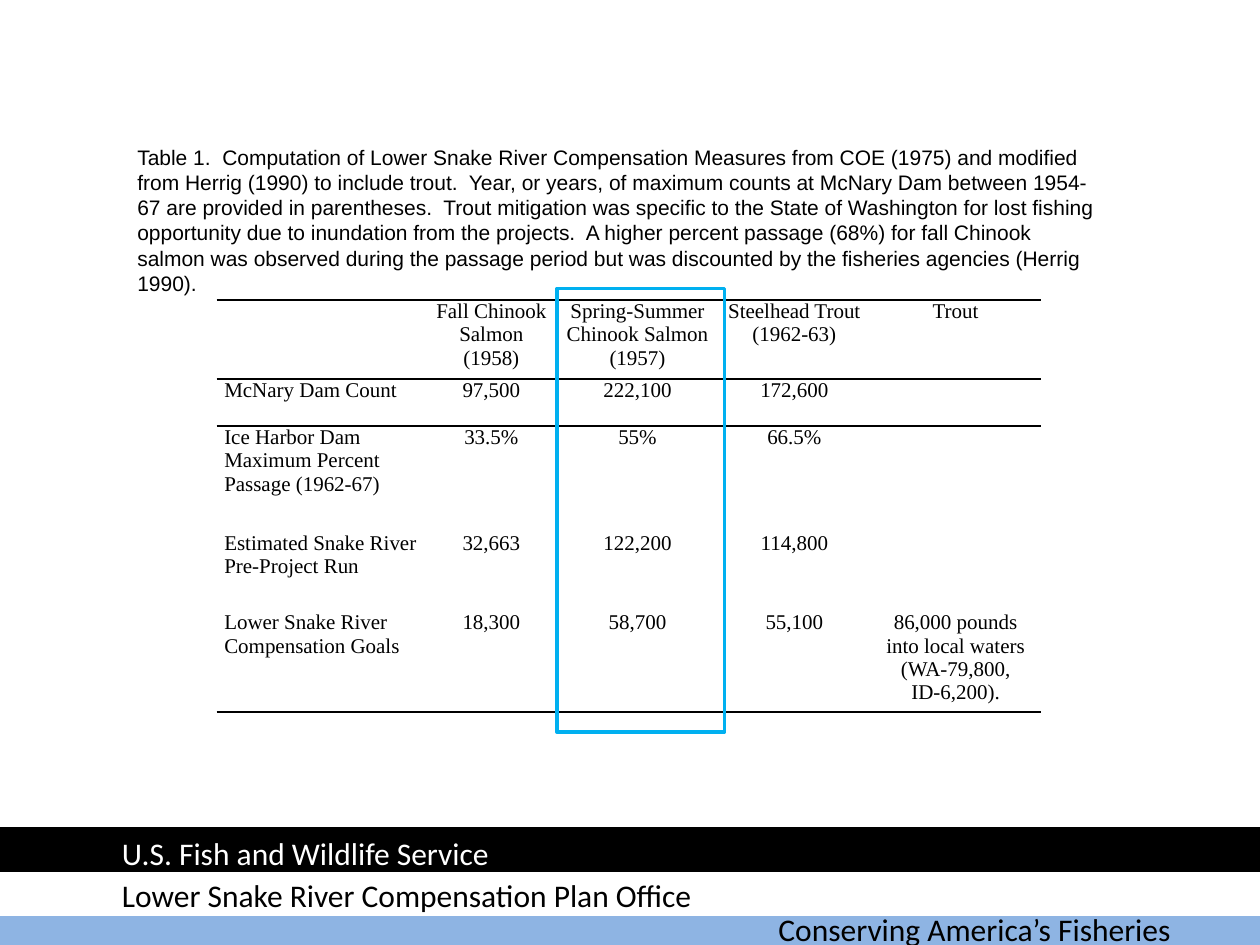
from lxml import etree
from pptx import Presentation
from pptx.dml.color import RGBColor
from pptx.enum.shapes import MSO_SHAPE
from pptx.enum.text import MSO_ANCHOR, PP_ALIGN
from pptx.oxml.ns import qn
from pptx.util import Inches, Pt

RECT = MSO_SHAPE.RECTANGLE
MIDDLE, TOP = MSO_ANCHOR.MIDDLE, MSO_ANCHOR.TOP
CENTER, LEFT = PP_ALIGN.CENTER, PP_ALIGN.LEFT
NO_STYLE = "{2D5ABB26-0587-4C30-8999-92F81FD0307C}"

COLORS = {"black": "000000", "white": "FFFFFF", "band": "8EB4E3", "highlight": "00B0F0"}
CAPTION_FONT = {"name": "Arial", "size": Pt(12)}
TABLE_FONT = {"name": "Times New Roman", "size": Pt(12)}
FOOTER_FONT = {"name": "Calibri", "size": Pt(18)}

CAPTION = (
    "Table 1.  Computation of Lower Snake River Compensation Measures from COE (1975) "
    "and modified from Herrig (1990) to include trout.  Year, or years, of maximum counts "
    "at McNary Dam between 1954-67 are provided in parentheses.  Trout mitigation was "
    "specific to the State of Washington for lost fishing opportunity due to inundation "
    "from the projects.  A higher percent passage (68%) for fall Chinook salmon was "
    "observed during the passage period but was discounted by the fisheries agencies "
    "(Herrig 1990)."
)
COL_WIDTHS = [1.66, 1.04, 1.28, 1.21, 1.35]
ROW_HEIGHTS = [0.63, 0.37, 0.84, 0.63, 0.8]
ROWS = [
    ["", "Fall Chinook Salmon (1958)", "Spring-Summer Chinook Salmon (1957)",
     "Steelhead Trout (1962-63)", "Trout"],
    ["McNary Dam Count", "97,500", "222,100", "172,600", ""],
    ["Ice Harbor Dam Maximum Percent Passage (1962-67)", "33.5%", "55%", "66.5%", ""],
    ["Estimated Snake River Pre-Project Run", "32,663", "122,200", "114,800", ""],
    ["Lower Snake River Compensation Goals", "18,300", "58,700", "55,100",
     "86,000 pounds into local waters (WA-79,800, ID-6,200)."],
]
# Border sides ruled on each row
RULES = {0: ["lnT", "lnB"], 1: ["lnT"], 4: ["lnB"]}


def rgb(name):
    return RGBColor.from_string(COLORS[name])


def write(p, text, fmt, color="black"):
    r = p.add_run()
    r.text = text
    for key, value in fmt.items():
        setattr(r.font, key, value)
    r.font.color.rgb = rgb(color)


def add_rect(slide, box, line, fill=None):
    sp = slide.shapes.add_shape(RECT, *map(Inches, box))
    sp.shadow.inherit = False
    if fill:
        sp.fill.solid()
        sp.fill.fore_color.rgb = rgb(fill)
    else:
        sp.fill.background()
    sp.line.color.rgb = rgb(line)
    sp.line.width = Pt(2)


def add_text(slide, box, text, fmt, color="black", anchor=TOP, insets=(0.1, 0.05)):
    tf = slide.shapes.add_textbox(*map(Inches, box)).text_frame
    tf.word_wrap = True
    tf.vertical_anchor = anchor
    tf.margin_left = tf.margin_right = Inches(insets[0])
    tf.margin_top = tf.margin_bottom = Inches(insets[1])
    write(tf.paragraphs[0], text, fmt, color)


def add_footer(slide, left, top, width):
    # Bands, from back to front
    for dx, dy, color in [(-0.01, 0.59, "band"), (0, 0.35, "white"), (0, 0, "black")]:
        add_rect(slide, (left + dx, top + dy, width, 0.33), color, color)
    # Labels
    labels = [
        (6.08, 0.59, 3.67, "Conserving America’s Fisheries", "black"),
        (0.87, -0.01, 4.16, "U.S. Fish and Wildlife Service", "white"),
        (0.87, 0.32, 4.97, "Lower Snake River Compensation Plan Office", "black"),
    ]
    for dx, dy, w, text, color in labels:
        add_text(slide, (left + dx, top + dy, w, 0.4), text, FOOTER_FONT, color)


def rule_cell(cell, sides):
    tc_pr = cell._tc.get_or_add_tcPr()
    for i, side in enumerate(sides):
        ln = etree.Element(qn("a:" + side), w=str(Pt(1)))
        fill = etree.SubElement(ln, qn("a:solidFill"))
        etree.SubElement(fill, qn("a:srgbClr"), val=COLORS["black"])
        tc_pr.insert(i, ln)


def add_counts_table(slide, left, top):
    box = (left, top, sum(COL_WIDTHS), sum(ROW_HEIGHTS))
    table = slide.shapes.add_table(len(ROWS), len(COL_WIDTHS), *map(Inches, box)).table
    table.first_row = table.horz_banding = False
    table._tbl.tblPr.find(qn("a:tableStyleId")).text = NO_STYLE
    for col, width in zip(table.columns, COL_WIDTHS):
        col.width = Inches(width)
    for i, (row, height) in enumerate(zip(table.rows, ROW_HEIGHTS)):
        row.height = Inches(height)
        for j, (cell, text) in enumerate(zip(row.cells, ROWS[i])):
            cell.fill.background()
            cell.margin_left = cell.margin_right = Inches(0.06)
            cell.margin_top = cell.margin_bottom = 0
            p = cell.text_frame.paragraphs[0]
            p.alignment = CENTER if j else LEFT
            if text:
                write(p, text, TABLE_FONT)
            else:
                # Keeps an empty cell from stretching its row
                etree.SubElement(p._p, qn("a:endParaRPr"), sz="1200")
            rule_cell(cell, RULES.get(i, []))


def main():
    prs = Presentation()
    prs.slide_width, prs.slide_height = Inches(10), Inches(7.5)
    slide = prs.slides.add_slide(prs.slide_layouts[6])
    add_footer(slide, 0, 6.58, 10)
    add_counts_table(slide, 1.72, 2.38)
    add_text(slide, (1.02, 1.1, 7.77, 1.29), CAPTION, CAPTION_FONT,
             anchor=MIDDLE, insets=(0.07, 0.04))
    # Frame around the spring-summer column
    add_rect(slide, (4.42, 2.29, 1.33, 3.52), "highlight")
    prs.save("out.pptx")


if __name__ == "__main__":
    main()
